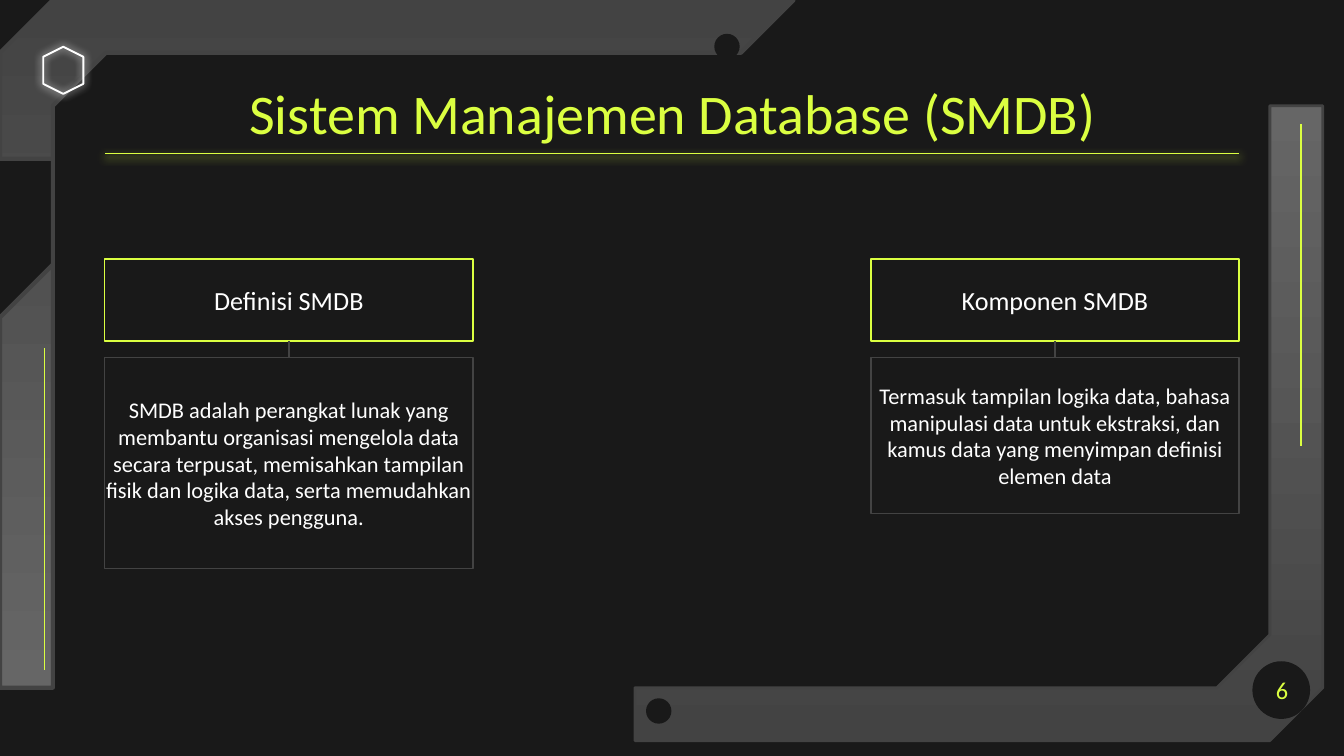
from lxml.etree import SubElement
from pptx import Presentation
from pptx.dml.color import RGBColor
from pptx.enum.shapes import MSO_CONNECTOR, MSO_SHAPE
from pptx.enum.text import MSO_ANCHOR, MSO_AUTO_SIZE, PP_ALIGN
from pptx.oxml import parse_xml
from pptx.oxml.ns import nsdecls, qn
from pptx.util import Cm, Pt

BACKGROUND = RGBColor(0x19, 0x19, 0x19)
GRAY = RGBColor(0x43, 0x43, 0x43)
LIGHT_GRAY = RGBColor(0x66, 0x66, 0x66)
LIME = RGBColor(0xDB, 0xFF, 0x41)
WHITE = RGBColor(0xFF, 0xFF, 0xFF)
FONT = "Calibri"


def glow(color, blur, distance=0):
    return parse_xml(
        f'<a:effectLst {nsdecls("a")}><a:outerShdw blurRad="{Pt(blur)}" '
        f'dist="{Pt(distance)}" dir="5400000" algn="bl" rotWithShape="0">'
        f'<a:srgbClr val="{color}"/></a:outerShdw></a:effectLst>'
    )


def write(shape, text, size, color, anchor=MSO_ANCHOR.MIDDLE, side=0.25):
    frame = shape.text_frame
    frame.text = text
    frame.word_wrap = True
    frame.auto_size = MSO_AUTO_SIZE.NONE
    frame.vertical_anchor = anchor
    frame.margin_left = frame.margin_right = Cm(side)
    frame.margin_top = frame.margin_bottom = Cm(0.25)
    paragraph = frame.paragraphs[0]
    paragraph.alignment = PP_ALIGN.CENTER
    font = paragraph.runs[0].font
    font.name, font.size = FONT, Pt(size)
    font.color.rgb = color


presentation = Presentation()
presentation.slide_width, presentation.slide_height = Cm(25.4), Cm(14.29)
slide = presentation.slides.add_slide(presentation.slide_layouts[5])
slide.background.fill.solid()
slide.background.fill.fore_color.rgb = BACKGROUND
shapes = slide.shapes

right_frame = [
    (24.61, 1.73), (24.18, 2.31), (24.18, 12.17), (23.32, 13), (12.29, 13),
    (11.56, 13.82), (24.38, 13.82), (24.97, 13.21), (24.97, 11.38),
    (24.79, 11.2), (24.79, 9.12), (24.97, 8.92), (24.97, 1.73),
]
left_frame = [
    (0.81, 13.34), (1.27, 12.7), (1.27, 2.21), (2.18, 1.32), (13.92, 1.32),
    (14.68, 0.48), (1.07, 0.48), (0.43, 1.12), (0.43, 3.07), (0.61, 3.25),
    (0.61, 5.49), (0.43, 5.69), (0.43, 13.34),
]
for points, top_color, bottom_color, width in [
    (right_frame, LIGHT_GRAY, GRAY, 1.5),
    (left_frame, GRAY, LIGHT_GRAY, 2.25),
]:
    builder = shapes.build_freeform(*points[0], scale=Cm(1))
    builder.add_line_segments(points[1:], close=True)
    frame_shape = builder.convert_to_shape()
    frame_shape.shadow.inherit = False
    frame_shape.fill.gradient()
    frame_shape.fill.gradient_angle = 270
    for stop, color in zip(frame_shape.fill.gradient_stops, (top_color, bottom_color)):
        stop.color.rgb = color
    frame_shape.line.color.rgb = GRAY
    frame_shape.line.width = Pt(width)

for left, top, size in [(13.5, 0.64, 0.48), (12.21, 13.2, 0.48), (23.67, 12.5, 1.09)]:
    hole = shapes.add_shape(MSO_SHAPE.OVAL, Cm(left), Cm(top), Cm(size), Cm(size))
    hole.shadow.inherit = False
    hole.fill.solid()
    hole.fill.fore_color.rgb = BACKGROUND
    hole.line.fill.background()

emblem = shapes.add_shape(MSO_SHAPE.HEXAGON, Cm(0.75), Cm(0.95), Cm(0.89), Cm(0.76))
emblem.rotation = 90
emblem.fill.background()
emblem.line.color.rgb = WHITE
emblem.line.width = Pt(1)
emblem.element.spPr.append(glow(WHITE, 4.5))

number_box = shapes.add_textbox(Cm(23.47), Cm(12.5), Cm(1.52), Cm(1.09))
write(number_box, "6", 13, LIME)

title = shapes.title
title.left, title.top, title.width, title.height = Cm(2.01), Cm(1.24), Cm(21.41), Cm(2.95)
write(title, "Sistem Manajemen Database (SMDB)", 30, LIME, MSO_ANCHOR.TOP)
title_run = title.text_frame.paragraphs[0].runs[0]
title_run.font.fill._xPr.find(qn("a:solidFill")).addnext(glow(LIME, 10))

for x1, y1, x2, y2 in [
    (0.84, 6.58, 0.84, 12.67),
    (24.59, 2.34, 24.59, 8.43),
    (1.98, 2.9, 23.42, 2.9),
]:
    accent = shapes.add_connector(MSO_CONNECTOR.STRAIGHT, Cm(x1), Cm(y1), Cm(x2), Cm(y2))
    accent.line.color.rgb = LIME
    accent.line.width = Pt(0.75)
    if y1 == y2:
        accent.element.spPr.append(glow(LIME, 4.5, 1.5))
    else:
        SubElement(accent.element.spPr, qn("a:effectLst"))

cards = [
    (1.98, 3.99, "Definisi SMDB",
     "SMDB adalah perangkat lunak yang membantu organisasi mengelola data secara "
     "terpusat, memisahkan tampilan fisik dan logika data, serta memudahkan akses "
     "pengguna."),
    (16.46, 2.95, "Komponen SMDB",
     "Termasuk tampilan logika data, bahasa manipulasi data untuk ekstraksi, dan "
     "kamus data yang menyimpan definisi elemen data"),
]
for left, body_height, heading_text, body_text in cards:
    boxes = []
    for top, height, text, size, color, side in [
        (4.9, 1.55, heading_text, 14, LIME, 0.25),
        (6.76, body_height, body_text, 12, GRAY, 0),
    ]:
        box = shapes.add_shape(MSO_SHAPE.RECTANGLE, Cm(left), Cm(top), Cm(6.96), Cm(height))
        box.shadow.inherit = False
        box.fill.background()
        box.line.color.rgb = color
        box.line.width = Pt(0.75)
        write(box, text, size, WHITE, side=side)
        boxes.append(box)
    heading, body = boxes
    link = shapes.add_connector(MSO_CONNECTOR.STRAIGHT, 0, 0, 0, 0)
    link.begin_connect(heading, 2)
    link.end_connect(body, 0)
    link.line.color.rgb = GRAY
    link.line.width = Pt(0.75)
    SubElement(link.element.spPr, qn("a:effectLst"))

presentation.save("out.pptx")
